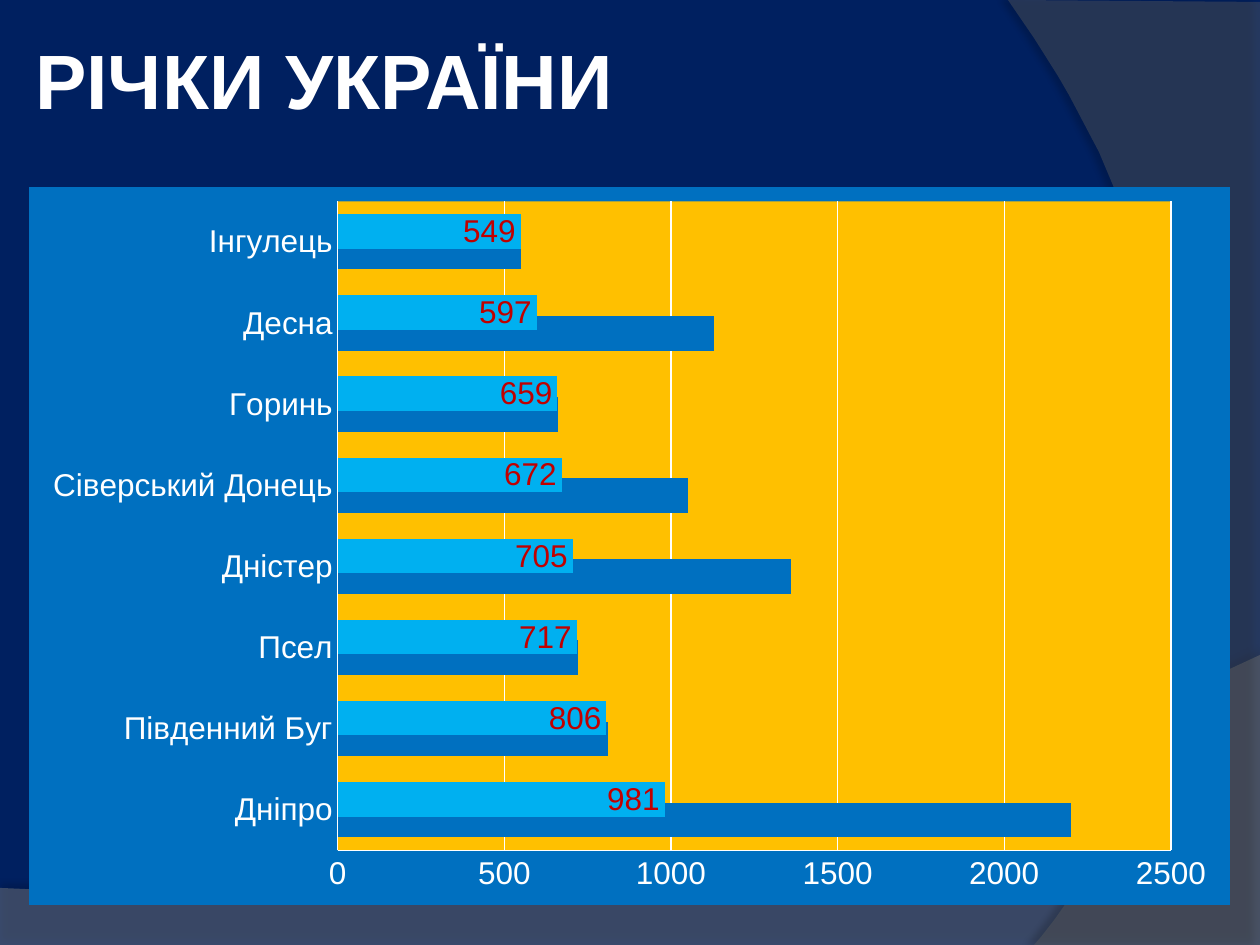
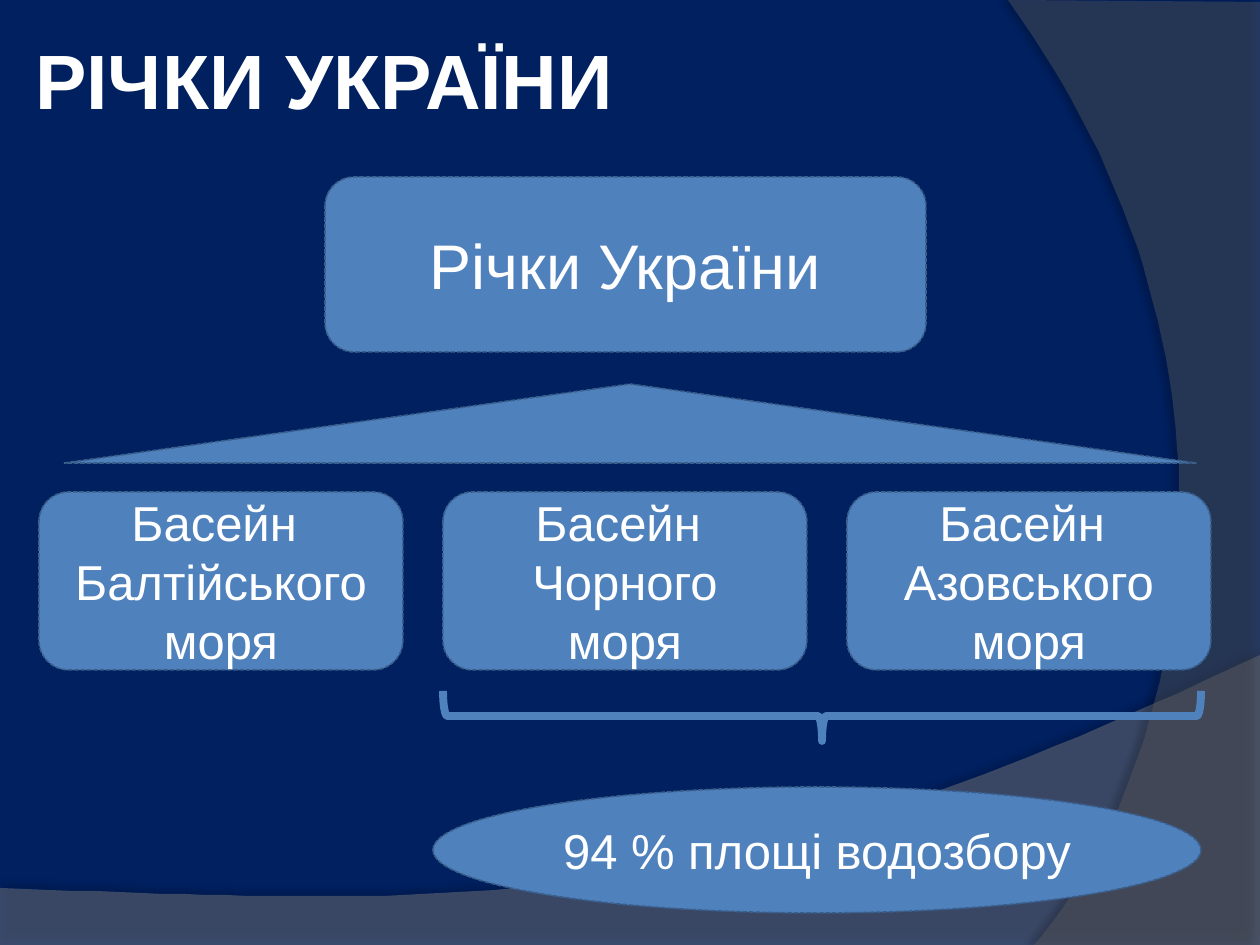
from lxml import etree
from pptx import Presentation
from pptx import util as u
from pptx.chart.data import CategoryChartData
from pptx.dml.color import RGBColor
from pptx.enum import chart as ch, dml, shapes, text
from pptx.oxml import parse_xml
from pptx.oxml.ns import nsdecls, qn

PX = 914400 / 126
NAVY = RGBColor(0x00, 0x20, 0x60)
GREY = RGBColor(0x7F, 0x7F, 0x7F)
DARK_GREY = RGBColor(0x5E, 0x5E, 0x5E)
WHITE = RGBColor(0xFF, 0xFF, 0xFF)
STEEL = RGBColor(0x4F, 0x81, 0xBD)
STEEL_EDGE = RGBColor(0x3A, 0x5F, 0x8C)
BLUE = RGBColor(0x00, 0x70, 0xC0)
SKY = RGBColor(0x00, 0xB0, 0xF0)
GOLD = RGBColor(0xFF, 0xC0, 0x00)
RED = RGBColor(0xC0, 0x00, 0x00)
FONT = "Arial"


def box(*lengths):
    return [round(n * PX) for n in lengths]


def write(sp, words, size, bold=False, align=text.PP_ALIGN.CENTER):
    tf = sp.text_frame
    tf.word_wrap = True
    tf.vertical_anchor = text.MSO_ANCHOR.MIDDLE
    tf.text = words
    for p in tf.paragraphs:
        p.alignment = align
        for name, value in {"name": FONT, "size": u.Pt(size), "bold": bold}.items():
            setattr(p.font, name, value)
        p.font.color.rgb = WHITE
    return tf


prs = Presentation()
prs.slide_width, prs.slide_height = box(1260, 945)
layout = prs.slide_layouts[6]
for ph in list(layout.placeholders):
    ph.element.getparent().remove(ph.element)
layout.background.fill.solid()
layout.background.fill.fore_color.rgb = NAVY
slides = [prs.slides.add_slide(layout) for _ in range(2)]

waves = [
    ([(0, 945), (1260, 945)], [(1260, 655), (704, 919), (493, 906), (0, 888)],
     GREY, 45, 35, 3.5, 270),
    ([(1260, 2), (1260, 945)], [(1034, 945), (1178, 780), (1283, 378), (1008, 0)],
     DARK_GREY, 40, 45, 4, 180),
]
for corners, curve, color, alpha, shade, dist, angle in waves:
    points = list(corners)
    for i in range(61):
        t = i / 60
        weights = ((1 - t) ** 3, 3 * t * (1 - t) ** 2, 3 * t * t * (1 - t), t ** 3)
        points.append(tuple(sum(w * c[k] for w, c in zip(weights, curve)) for k in (0, 1)))
    fb = slides[0].shapes.build_freeform(*points[0], scale=PX)
    fb.add_line_segments(points[1:])
    sp = fb.convert_to_shape()
    sp.fill.solid()
    sp.fill.fore_color.rgb = color
    sp.line.fill.background()
    srgb = sp.element.spPr.find(".//" + qn("a:srgbClr"))
    etree.SubElement(srgb, qn("a:alpha"), val=str(alpha * 1000))
    sp.element.spPr.append(parse_xml(
        f'<a:effectLst {nsdecls("a")}><a:outerShdw blurRad="{u.Pt(4)}" dist="{u.Pt(dist)}" '
        f'dir="{angle * 60000}" rotWithShape="0"><a:srgbClr val="000000">'
        f'<a:alpha val="{shade * 1000}"/></a:srgbClr></a:outerShdw></a:effectLst>'))
    layout.shapes.element.append(sp.element)

for s in slides:
    title = s.shapes.add_textbox(*box(29, 0, 1029, 157))
    tf = write(title, "РІЧКИ УКРАЇНИ", 44, True, text.PP_ALIGN.LEFT)
    for side in ("left", "right", "top", "bottom"):
        setattr(tf, f"margin_{side}", u.Inches(0.05))

data = CategoryChartData()
data.categories = ["Дніпро", "Південний Буг", "Псел", "Дністер",
                   "Сіверський Донець", "Горинь", "Десна", "Інгулець"]
data.add_series("Series 1", [2200, 810, 720, 1360, 1050, 660, 1130, 550])
data.add_series("Series 2", [981, 806, 717, 705, 672, 659, 597, 549])
chart = slides[0].shapes.add_chart(
    ch.XL_CHART_TYPE.BAR_CLUSTERED, *box(29, 187, 1201, 718), data).chart
chart.has_title = chart.has_legend = False
for name, value in {"name": FONT, "size": u.Pt(18)}.items():
    setattr(chart.font, name, value)
chart.font.color.rgb = WHITE

plot = chart.plots[0]
for name, value in {"gap_width": 75, "overlap": 40, "vary_by_categories": False}.items():
    setattr(plot, name, value)
for series, color in zip(plot.series, (BLUE, SKY)):
    series.format.fill.solid()
    series.format.fill.fore_color.rgb = color
labels = plot.series[1].data_labels
labels.show_value = True
labels.position = ch.XL_LABEL_POSITION.INSIDE_END
for name, value in {"name": FONT, "size": u.Pt(18)}.items():
    setattr(labels.font, name, value)
labels.font.color.rgb = RED

values = chart.value_axis
for name, value in {"minimum_scale": 0, "maximum_scale": 2500, "major_unit": 500,
                    "has_major_gridlines": True}.items():
    setattr(values, name, value)
for axis in (values, chart.category_axis):
    axis.major_tick_mark = axis.minor_tick_mark = ch.XL_TICK_MARK.NONE
for part in (values, values.major_gridlines, chart.category_axis):
    part.format.line.color.rgb = WHITE
    part.format.line.width = u.Pt(0.75)

space = chart.element
fills = [parse_xml(f'<c:spPr {nsdecls("c", "a")}><a:solidFill><a:srgbClr val="{color}"/>'
                   '</a:solidFill><a:ln><a:noFill/></a:ln></c:spPr>') for color in (BLUE, GOLD)]
space.find(qn("c:chart")).addnext(fills[0])
space.find(".//" + qn("c:plotArea")).append(fills[1])

KIND = shapes.MSO_SHAPE
nodes = [
    (KIND.ROUNDED_RECTANGLE, (325, 177, 601, 175), "Річки України", 36),
    (KIND.ISOSCELES_TRIANGLE, (64, 384, 1132, 79), "", 28),
    (KIND.OVAL, (433, 787, 768, 126), "94 % площі водозбору", 28),
]
for i, sea in enumerate(("Балтійського", "Чорного", "Азовського")):
    nodes.append((KIND.ROUNDED_RECTANGLE, (39 + 404 * i, 492, 364, 178),
                  f"Басейн \n{sea}\nморя", 28))
for kind, place, words, size in nodes:
    sp = slides[1].shapes.add_shape(kind, *box(*place))
    sp.shadow.inherit = False
    sp.fill.solid()
    sp.fill.fore_color.rgb = STEEL
    sp.line.color.rgb = STEEL_EDGE
    for name, value in {"width": u.Pt(0.9), "dash_style": dml.MSO_LINE.SQUARE_DOT}.items():
        setattr(sp.line, name, value)
    if words:
        write(sp, words, size)

brace = slides[1].shapes.add_shape(KIND.RIGHT_BRACE, *box(797, 337, 50, 758))
brace.rotation = 90
brace.shadow.inherit = False
brace.fill.background()
brace.line.color.rgb = STEEL
brace.line.width = u.Pt(4.5)

prs.save("out.pptx")
